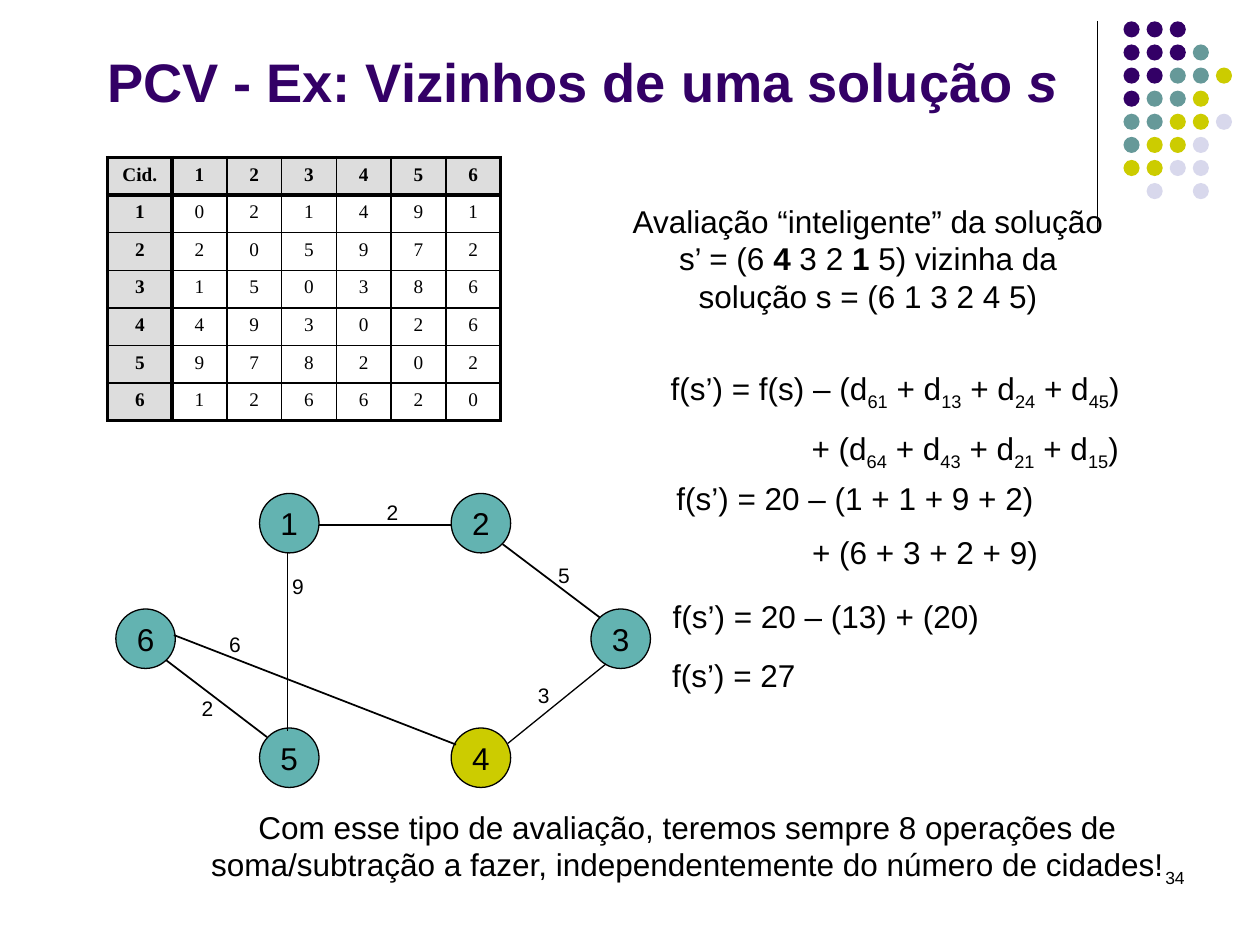
from lxml.etree import SubElement
from pptx import Presentation
from pptx.dml.color import RGBColor
from pptx.enum.shapes import MSO_CONNECTOR, MSO_SHAPE
from pptx.enum.text import MSO_ANCHOR as ANCHOR, PP_ALIGN as ALIGN
from pptx.oxml.ns import qn
from pptx.util import Pt

COLORS = {
    "ink": "000000", "purple": "330066", "teal": "669999", "lime": "CCCC00",
    "lilac": "D8D8EC", "node": "63B3B1", "header": "DDDDDD",
}


def write(frame, *lines, size=18, font="Arial", color="ink", bold=False, accent="bold",
          align=ALIGN.CENTER, anchor=ANCHOR.TOP, wrap=True, indents=(0, 0)):
    frame.word_wrap = wrap
    frame.vertical_anchor = anchor
    for index, (line, indent) in enumerate(zip(lines, indents)):
        para = frame.add_paragraph() if index else frame.paragraphs[0]
        para.alignment = align
        if index:
            para.space_before = Pt(9.5)
        if indent:
            para._p.get_or_add_pPr().set("marL", str(Pt(indent)))
        for position, piece in enumerate(line.split("|")):
            span = para.add_run()
            span.text = piece
            span.font.size = Pt(size)
            span.font.name = font
            span.font.bold = bold
            span.font.color.rgb = RGBColor.from_string(COLORS[color])
            if position % 2 and accent == "subscript":
                span.font._element.set("baseline", "-25000")
            elif position % 2:
                setattr(span.font, accent, True)


def add_line(x1, y1, x2, y2, weight):
    line = page.shapes.add_connector(MSO_CONNECTOR.STRAIGHT, Pt(x1), Pt(y1), Pt(x2), Pt(y2))
    line.line.color.rgb = RGBColor.from_string(COLORS["ink"])
    line.line.width = Pt(weight)
    SubElement(line._element.spPr, qn("a:effectLst"))


deck = Presentation()
deck.slide_width, deck.slide_height = Pt(720), Pt(540)
page = deck.slides.add_slide(deck.slide_layouts[5])

add_line(627, 12, 627, 132, 0.75)

DOT_ROWS = ["PPP", "PPPT", "PPTTL", "PTTL", "TTLLG", "TLLG", "LLGG", " G G"]
DOT_COLORS = {"P": "purple", "T": "teal", "L": "lime", "G": "lilac"}
for row, dots in enumerate(DOT_ROWS):
    for column, key in enumerate(dots):
        if key == " ":
            continue
        dot = page.shapes.add_shape(
            MSO_SHAPE.OVAL, Pt(642 + 13.2 * column), Pt(12.2 + 13.2 * row), Pt(9.2), Pt(9.2))
        dot.shadow.inherit = False
        dot.fill.solid()
        dot.fill.fore_color.rgb = RGBColor.from_string(COLORS[DOT_COLORS[key]])
        dot.line.fill.background()

title = page.shapes.title
title.left, title.top, title.width, title.height = Pt(54), Pt(18), Pt(570), Pt(50.4)
write(title.text_frame, "PCV - Ex: Vizinhos de uma solução |s|", size=31, color="purple",
      bold=True, accent="italic", align=ALIGN.LEFT, anchor=ANCHOR.BOTTOM)

NODES = [
    ("1", 148.3, 282, "node"), ("2", 257.8, 282, "node"), ("3", 337.7, 348, "node"),
    ("4", 257.8, 416, "lime"), ("5", 148.3, 416, "node"), ("6", 66.2, 348, "node"),
]
for name, left, top, color in NODES:
    node = page.shapes.add_shape(MSO_SHAPE.OVAL, Pt(left), Pt(top), Pt(34), Pt(34))
    node.shadow.inherit = False
    node.fill.solid()
    node.fill.fore_color.rgb = RGBColor.from_string(COLORS[color])
    node.line.color.rgb = RGBColor.from_string(COLORS["ink"])
    node.line.width = Pt(0.75)
    write(node.text_frame, name, anchor=ANCHOR.MIDDLE, wrap=False)

DISTANCES = [
    ["Cid.", 1, 2, 3, 4, 5, 6],
    [1, 0, 2, 1, 4, 9, 1],
    [2, 2, 0, 5, 9, 7, 2],
    [3, 1, 5, 0, 3, 8, 6],
    [4, 4, 9, 3, 0, 2, 6],
    [5, 9, 7, 8, 2, 0, 2],
    [6, 1, 2, 6, 6, 2, 0],
]
table = page.shapes.add_table(7, 7, Pt(61.5), Pt(90), Pt(224.6), Pt(150.5)).table
table.first_row = table.horz_banding = False
for index in range(7):
    table.columns[index].width = Pt(31.3 if index else 36.8)
    table.rows[index].height = Pt(21.5)
for row, values in enumerate(DISTANCES):
    for column, value in enumerate(values):
        cell = table.cell(row, column)
        heading = row == 0 or column == 0
        cell.margin_left = cell.margin_right = Pt(3)
        write(cell.text_frame, str(value), size=11, font="Times New Roman", bold=heading)
        thick_sides = {"L": column in (0, 1), "R": column in (0, 6),
                       "T": row in (0, 1), "B": row in (0, 6)}
        for side, thick in thick_sides.items():
            border = SubElement(cell._tc.get_or_add_tcPr(), qn(f"a:ln{side}"),
                                w=str(Pt(2.25 if thick else 1)))
            SubElement(SubElement(border, qn("a:solidFill")), qn("a:srgbClr"), val=COLORS["ink"])
        if heading:
            cell.fill.solid()
            cell.fill.fore_color.rgb = RGBColor.from_string(COLORS["header"])
        else:
            cell.fill.background()

EDGES = [
    ((152.6, 421.2, 95, 377.3, 1), "2", 108, 393.8),
    ((342.7, 352.8, 287.3, 311, 1), "5", 311.8, 318.2),
    ((257.8, 300.2, 182.2, 300.2, 1), "2", 213.8, 282.2),
    ((260.6, 425.5, 99.4, 362.9, 1), "6", 123.8, 357.1),
    ((290.2, 424.8, 346.3, 379.4, 0.75), "3", 300.2, 386.6),
    ((164.2, 315.4, 164.2, 417.6, 0.75), "9", 159.8, 324),
]
for ends, cost, left, top in EDGES:
    add_line(*ends)
    label = page.shapes.add_textbox(Pt(left), Pt(top), Pt(21), Pt(21.6))
    write(label.text_frame, cost, size=12, wrap=False)

EQUATIONS = [
    (372.2, 207.4, 285, 62, (4, 84.5),
     ["f(s’) = f(s) – (d|61| + d|13| + d|24| + d|45|)", "+ (d|64| + d|43| + d|21| + d|15|)"]),
    (348.5, 270, 285, 62, (31, 108.5), ["f(s’) = 20 – (1 + 1 + 9 + 2)", "+ (6 + 3 + 2 + 9)"]),
    (365.8, 337.7, 222.5, 28.8, (11.5,), ["f(s’) = 20 – (13) + (20)"]),
    (371.5, 371.5, 106.6, 28.8, (5.5,), ["f(s’) = 27"]),
]
for left, top, width, height, indents, lines in EQUATIONS:
    box = page.shapes.add_textbox(Pt(left), Pt(top), Pt(width), Pt(height))
    write(box.text_frame, *lines, accent="subscript", align=ALIGN.LEFT, indents=indents)

NOTES = [
    (349, 111.6, 294, 72.7, 18, ALIGN.CENTER,
     "Avaliação “inteligente” da solução s’ = (6 |4| 3 2 |1| 5) vizinha da solução s = (6 1 3 2 4 5)"),
    (110.2, 457.9, 565.2, 51.1, 18, ALIGN.CENTER,
     "Com esse tipo de avaliação, teremos sempre 8 operações de soma/subtração a fazer, "
     "independentemente do número de cidades!"),
    (516, 492, 168, 36, 10, ALIGN.RIGHT, "34"),
]
for left, top, width, height, size, align, text in NOTES:
    box = page.shapes.add_textbox(Pt(left), Pt(top), Pt(width), Pt(height))
    write(box.text_frame, text, size=size, align=align)

deck.save("out.pptx")
